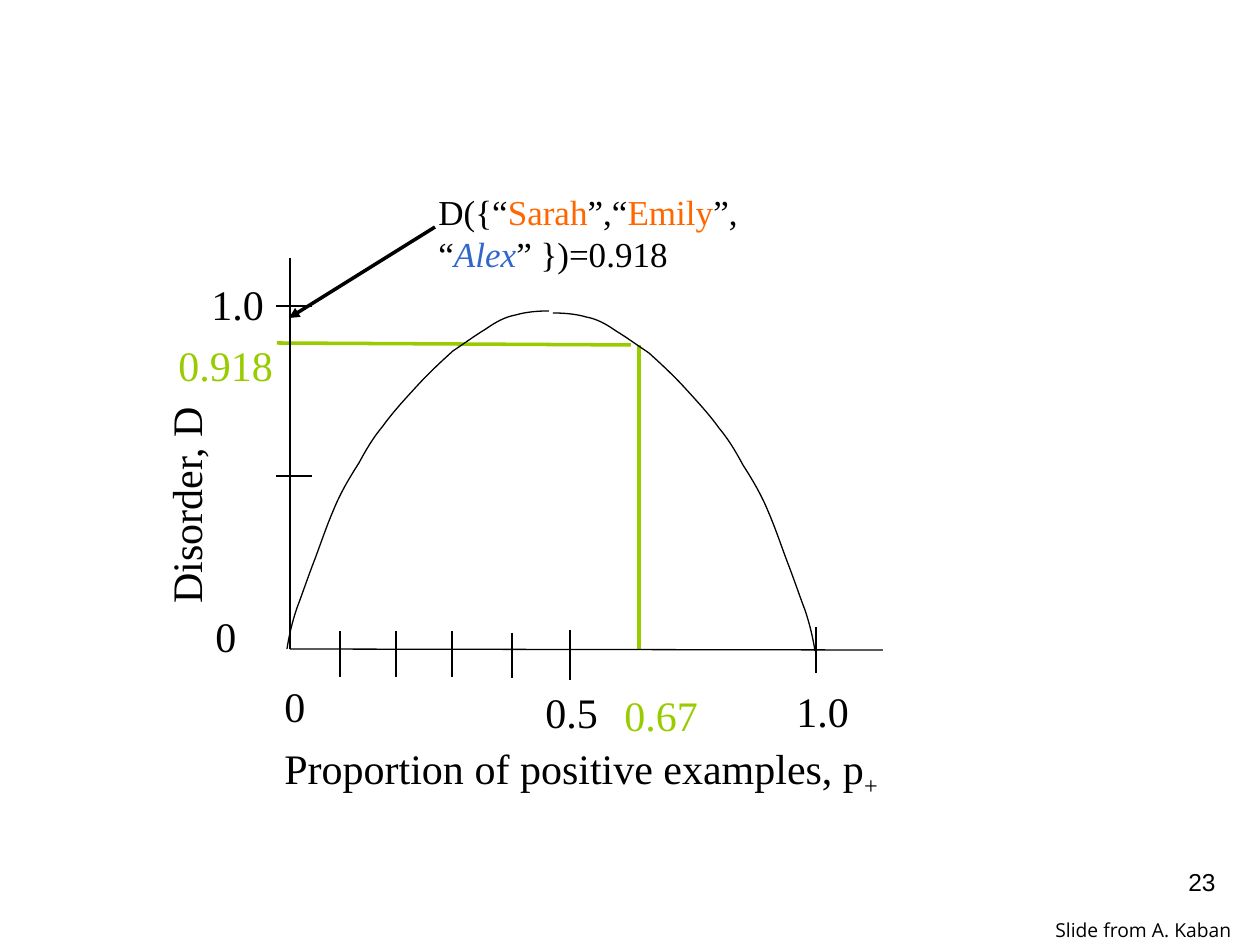
from dataclasses import dataclass

from lxml.etree import SubElement
from pptx import Presentation
from pptx.dml.color import RGBColor
from pptx.enum.shapes import MSO_CONNECTOR
from pptx.enum.text import PP_ALIGN
from pptx.oxml.ns import qn
from pptx.util import Emu, Pt

SCALE = 914400 / 126
BLACK, GREEN, ORANGE, BLUE = "000000", "99CC00", "FF6600", "3366CC"
SERIF = "Times New Roman"


@dataclass
class Span:
    text: str
    color: str = BLACK
    italic: bool = False
    subscript: bool = False


@dataclass
class Label:
    text: str
    left: int
    top: int
    width: int
    color: str = BLACK


@dataclass
class Line:
    start: tuple[int, int]
    end: tuple[int, int]
    color: str = BLACK
    weight: float = 0.75
    arrow: bool = False


def px(length: float) -> Emu:
    return Emu(round(length * SCALE))


def rgb(color: str) -> RGBColor:
    return RGBColor.from_string(color)


def add_text(page, text: str | list[Span], left: int, top: int, width: int, height: int = 63, *,
             size: int = 24, font: str = SERIF, color: str = BLACK,
             align: PP_ALIGN = PP_ALIGN.LEFT, rotation: int = 0) -> None:
    box = page.shapes.add_textbox(px(left), px(top), px(width), px(height))
    box.rotation = rotation
    box.text_frame.word_wrap = True
    para = box.text_frame.paragraphs[0]
    para.alignment = align
    spans = [Span(text, color)] if isinstance(text, str) else text
    for span in spans:
        if span.text == "\n":
            para.add_line_break()
            continue
        run = para.add_run()
        run.text = span.text
        run.font.name = font
        run.font.size = Pt(size)
        run.font.color.rgb = rgb(span.color)
        run.font.italic = span.italic
        if span.subscript:
            run.font._element.set("baseline", "-25000")


def add_line(page, line: Line) -> None:
    connector = page.shapes.add_connector(
        MSO_CONNECTOR.STRAIGHT, *map(px, line.start + line.end))
    connector.line.color.rgb = rgb(line.color)
    connector.line.width = Pt(line.weight)
    if line.arrow:
        SubElement(connector.line._get_or_add_ln(), qn("a:tailEnd"), type="triangle")
    SubElement(connector._element.spPr, qn("a:effectLst"))


def add_curve(page, peak: tuple[int, int], direction: int) -> None:
    points = [(peak[0] + direction * across, peak[1] + down) for across, down in HALF_CURVE]
    builder = page.shapes.build_freeform(*peak, scale=SCALE)
    builder.add_line_segments(points, close=False)
    curve = builder.convert_to_shape()
    curve.shadow.inherit = False
    curve.fill.background()
    curve.line.color.rgb = rgb(BLACK)
    curve.line.width = Pt(0.75)
    outline = next(curve._element.iter(qn("a:path")))
    segments = outline.findall(qn("a:lnTo"))
    for first in range(0, len(segments), 3):
        bezier = SubElement(outline, qn("a:cubicBezTo"))
        for segment in segments[first:first + 3]:
            bezier.append(segment[0])
            outline.remove(segment)


HALF_CURVE = [
    (11, 0), (23, 1), (33, 4), (44, 6), (53, 11), (63, 18),
    (73, 24), (84, 32), (96, 40), (107, 50), (120, 62), (131, 74),
    (142, 86), (156, 101), (166, 115), (176, 127), (183, 139), (190, 152),
    (199, 166), (208, 181), (215, 198), (222, 214), (228, 232), (234, 248),
    (241, 266), (247, 284), (252, 297), (257, 312), (260, 325), (262, 338),
]

AXES = [Line((290, 258), (290, 649)), Line((290, 649), (883, 650))]
X_TICKS = [Line((x, top), (x, bottom)) for x, top, bottom in [
    (340, 631, 677), (396, 631, 677), (452, 631, 677),
    (512, 633, 678), (570, 630, 680), (816, 627, 673)]]
Y_TICKS = [Line((276, y), (312, y)) for y in (306, 476)]
GUIDES = [
    Line((631, 345), (277, 343), GREEN, 2),
    Line((639, 345), (639, 650), GREEN, 2),
]
POINTER = Line((435, 227), (289, 318), weight=2, arrow=True)

LABELS = [
    Label("1.0", 199, 272, 107),
    Label("0.918", 166, 333, 170, GREEN),
    Label("0", 203, 604, 73),
    Label("0", 272, 674, 73),
    Label("0.5", 533, 680, 107),
    Label("0.67", 612, 683, 126, GREEN),
    Label("1.0", 784, 679, 107),
]
X_TITLE = [Span("Proportion of positive examples, p"), Span("+", subscript=True)]
ANNOTATION = [
    Span("D({“"), Span("Sarah", ORANGE), Span("”,“"), Span("Emily", ORANGE), Span("”, "),
    Span("\n"), Span("“"), Span("Alex", BLUE, italic=True), Span("” })=0.918"),
]


def main() -> None:
    deck = Presentation()
    deck.slide_width, deck.slide_height = px(1260), px(945)
    page = deck.slides.add_slide(deck.slide_layouts[6])

    for line in GUIDES + AXES + X_TICKS + Y_TICKS + [POINTER]:
        add_line(page, line)
    add_curve(page, (549, 311), -1)
    add_curve(page, (553, 313), 1)

    for label in LABELS:
        add_text(page, label.text, label.left, label.top, label.width, color=label.color)
    add_text(page, X_TITLE, 272, 736, 627)
    add_text(page, "Disorder, D", 57, 456, 257, rotation=270)
    add_text(page, ANNOTATION, 426, 184, 561, 54, size=20)
    add_text(page, "23", 966, 861, 262, size=14, font="Arial", align=PP_ALIGN.RIGHT)
    add_text(page, "Slide from A. Kaban", 1043, 912, 212, 37, size=11, font="Open Sans")

    deck.save("out.pptx")


if __name__ == "__main__":
    main()
